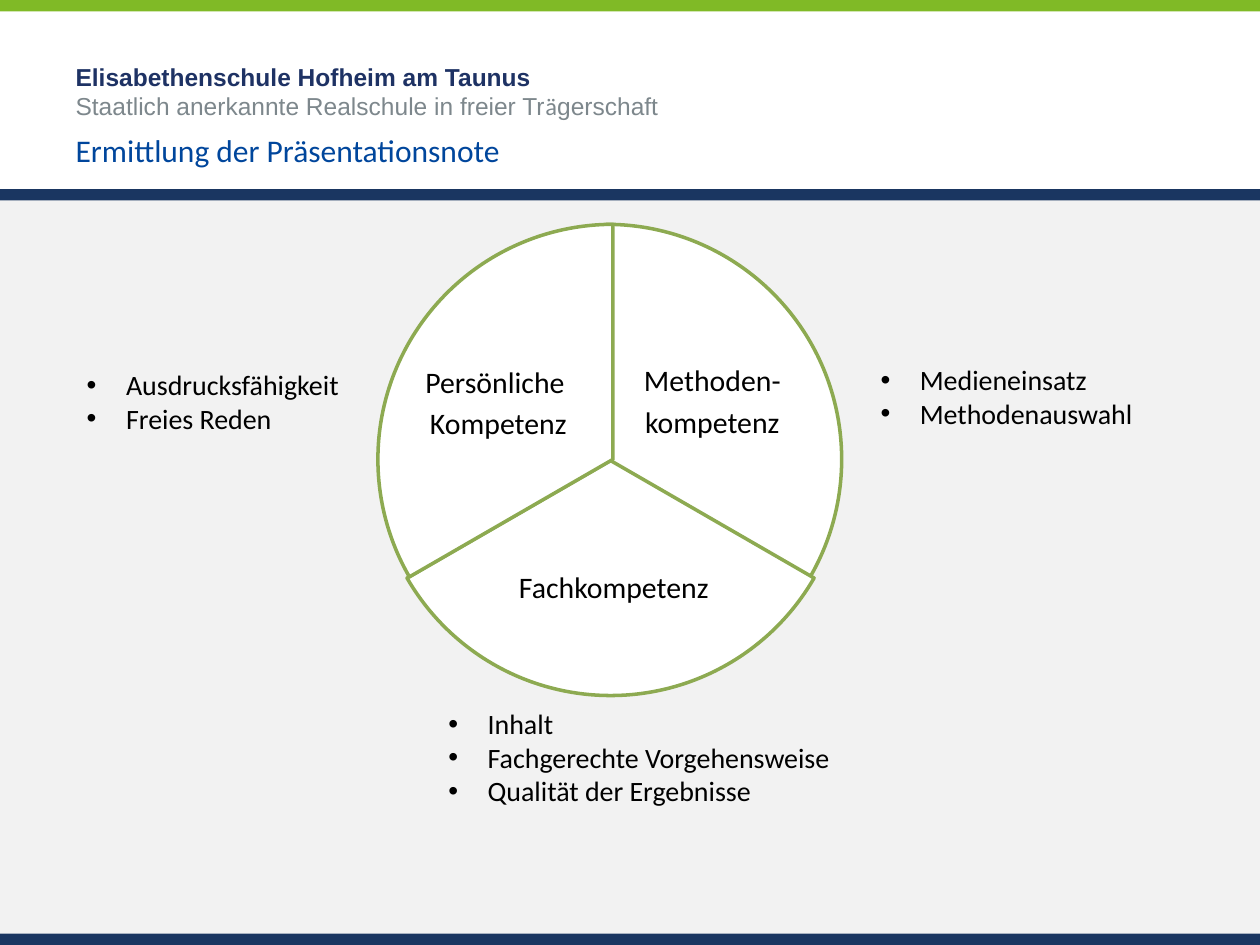
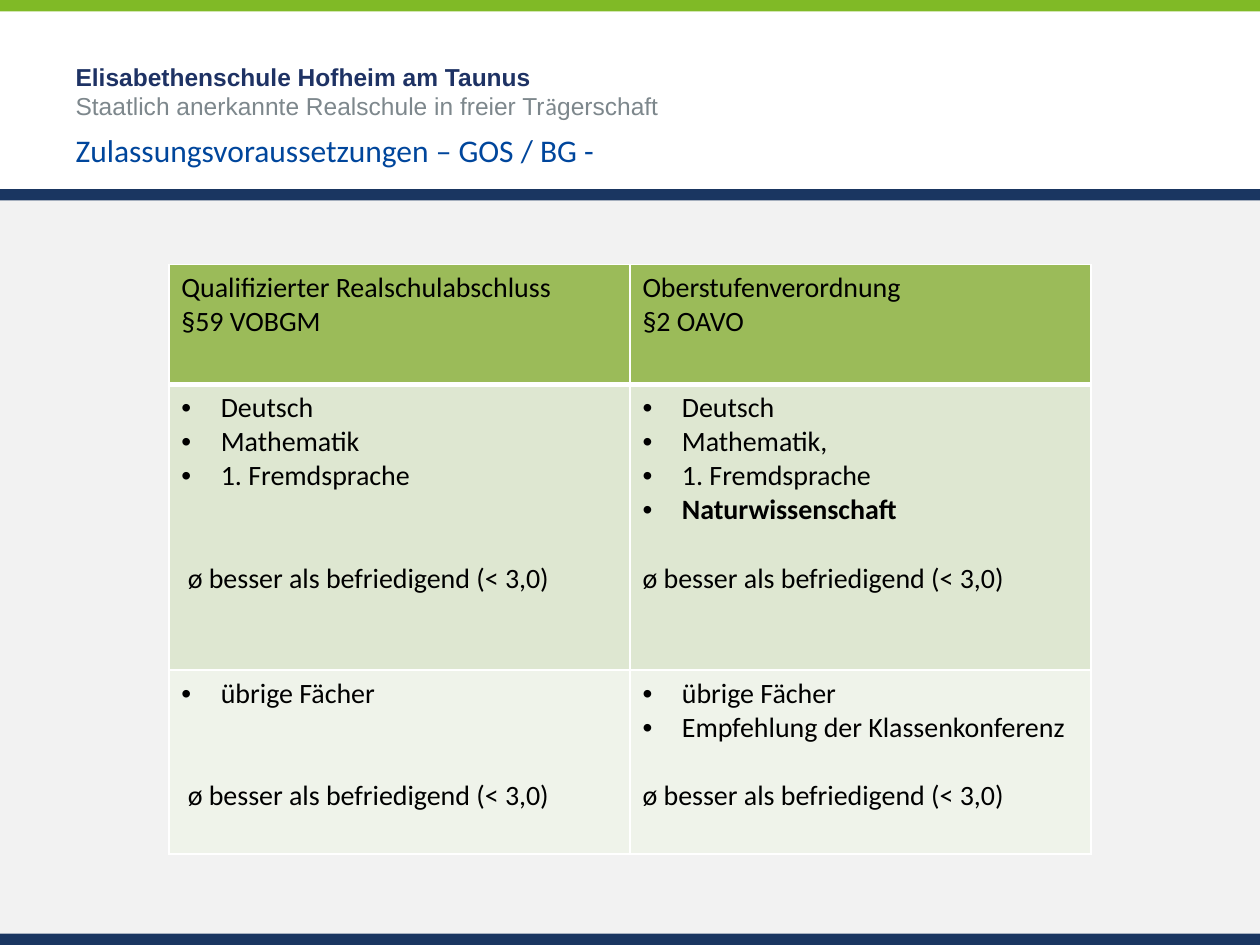
"""Build two school slides: presentation grading and admission requirements."""
import pptx
import pptx.dml.color
import pptx.enum.shapes
import pptx.enum.text
import pptx.oxml
import pptx.oxml.ns
import pptx.util
from lxml import etree

Pt = pptx.util.Pt
ALIGN = pptx.enum.text.PP_ALIGN
ANCHOR = pptx.enum.text.MSO_ANCHOR
SHAPES = pptx.enum.shapes.MSO_SHAPE

NAVY, GREEN, GREY, WHITE, BLACK = "1A3661", "80BA26", "F2F2F2", "FFFFFF", "000000"
SCHOOL, SUBLINE, HEADING, OUTLINE = "1E3264", "7D878C", "00469C", "8DAA51"
ROW_FILLS = ["9BBB59", "DEE7D1", "EFF3EA"]
BAND = 6.5
BULLET_INDENT = 22.5
LINE = 19.5
PIE_SIZE = 268.6

SCHOOL_FONT = {"name": "Arial", "size": Pt(14), "bold": True}
SUBLINE_FONT = {"name": "Arial", "size": Pt(14), "bold": False}
UMLAUT_FONT = {"name": "Calibri", "size": Pt(14), "bold": False}
HEADING_FONT = {"name": "Calibri", "size": Pt(18), "bold": False}
LABEL_FONT = {"name": "Calibri", "size": Pt(17), "bold": False}
TEXT_FONT = {"name": "Calibri", "size": Pt(16), "bold": False}
STRONG_FONT = {**TEXT_FONT, "bold": True}

LABEL_FRAME = {"word_wrap": True, "vertical_anchor": ANCHOR.MIDDLE}
LABEL_FRAME.update({f"margin_{side}": Pt(1.44) for side in ("left", "top", "right", "bottom")})
LABEL_PARAGRAPH = {"alignment": ALIGN.CENTER, "line_spacing": 0.9, "space_after": Pt(5.5)}
HEADER_FRAME = {
    "word_wrap": True,
    "auto_size": pptx.enum.text.MSO_AUTO_SIZE.NONE,
    "vertical_anchor": ANCHOR.TOP,
}
HEADER_PARAGRAPH = {"alignment": ALIGN.LEFT, "space_before": Pt(0)}


def apply(target, values):
    for key, value in values.items():
        setattr(target, key, value)


def rgb(value):
    return pptx.dml.color.RGBColor.from_string(value)


def add_run(paragraph, text, font, color=BLACK):
    run = paragraph.add_run()
    run.text = text
    apply(run.font, font)
    run.font.color.rgb = rgb(color)


def indent(paragraph, left, first=0):
    properties = paragraph._p.get_or_add_pPr()
    properties.set("marL", str(int(Pt(left))))
    properties.set("indent", str(int(Pt(first))))
    return properties


def add_bullet(paragraph):
    properties = indent(paragraph, BULLET_INDENT, -BULLET_INDENT)
    for tag, attribute, value in (("a:buFont", "typeface", "Arial"), ("a:buChar", "char", "•")):
        etree.SubElement(properties, pptx.oxml.ns.qn(tag)).set(attribute, value)


def paragraphs(frame, count):
    return [frame.paragraphs[0]] + [frame.add_paragraph() for _ in range(count - 1)]


def place(shape, left, top, width, height):
    apply(shape, {"left": Pt(left), "top": Pt(top), "width": Pt(width), "height": Pt(height)})


def add_band(slide, top, height, color):
    band = slide.shapes.add_shape(SHAPES.RECTANGLE, Pt(0), Pt(top), Pt(720), Pt(height))
    band.shadow.inherit = False
    band.fill.solid()
    band.fill.fore_color.rgb = rgb(color)
    band.line.fill.background()


def add_school_slide(deck, heading):
    slide = deck.slides.add_slide(deck.slide_layouts[1])
    for top, height, color in (
        (111.6, 421.9, GREY),
        (0, BAND, GREEN),
        (540 - BAND, BAND, NAVY),
        (108, BAND, NAVY),
    ):
        add_band(slide, top, height, color)

    school, topic = slide.shapes.title, slide.placeholders[1]
    place(school, 36, 31.7, 488, 39.6)
    place(topic, 36, 71.3, 488, 22.3)
    for header in (school, topic):
        apply(header.text_frame, HEADER_FRAME)
        apply(header.text_frame.paragraphs[0], HEADER_PARAGRAPH)

    name = school.text_frame.paragraphs[0]
    add_run(name, "Elisabethenschule Hofheim am Taunus", SCHOOL_FONT, SCHOOL)
    name.add_line_break()
    add_run(name, "Staatlich anerkannte Realschule in freier Tr", SUBLINE_FONT, SUBLINE)
    add_run(name, "ä", UMLAUT_FONT, SUBLINE)
    add_run(name, "gerschaft", SUBLINE_FONT, SUBLINE)

    line = topic.text_frame.paragraphs[0]
    etree.SubElement(indent(line, 0), pptx.oxml.ns.qn("a:buNone"))
    add_run(line, heading, HEADING_FONT, HEADING)
    return slide


def add_sector(slide, left, top, start, end):
    sector = slide.shapes.add_shape(SHAPES.PIE, Pt(left), Pt(top), Pt(PIE_SIZE), Pt(PIE_SIZE))
    for index, degrees in enumerate((start, end)):
        sector.adjustments[index] = degrees * 0.6
    sector.shadow.inherit = False
    sector.fill.solid()
    sector.fill.fore_color.rgb = rgb(WHITE)
    sector.line.color.rgb = rgb(OUTLINE)
    sector.line.width = Pt(2)


def add_label(slide, bounds, lines):
    frame = slide.shapes.add_textbox(*map(Pt, bounds)).text_frame
    apply(frame, LABEL_FRAME)
    for paragraph, text in zip(paragraphs(frame, len(lines)), lines):
        apply(paragraph, LABEL_PARAGRAPH)
        add_run(paragraph, text, LABEL_FONT)


def add_criteria(slide, bounds, criteria):
    frame = slide.shapes.add_textbox(*map(Pt, bounds)).text_frame
    frame.word_wrap = True
    for paragraph, text in zip(paragraphs(frame, len(criteria)), criteria):
        add_bullet(paragraph)
        add_run(paragraph, text, TEXT_FONT)


def set_borders(cell, top, bottom):
    properties = cell._tc.get_or_add_tcPr()
    for side, width in (("L", 1), ("R", 1), ("T", top), ("B", bottom)):
        properties.append(pptx.oxml.parse_xml(
            f'<a:ln{side} {pptx.oxml.ns.nsdecls("a")} w="{int(Pt(width))}">'
            f'<a:solidFill><a:srgbClr val="{WHITE}"/></a:solidFill></a:ln{side}>'
        ))


def fill_requirements(cell, subjects, gap, left):
    *bullets, average = paragraphs(cell.text_frame, len(subjects) + 1)
    for paragraph, subject in zip(bullets, subjects):
        add_bullet(paragraph)
        font = STRONG_FONT if subject == "Naturwissenschaft" else TEXT_FONT
        add_run(paragraph, subject, font)
    indent(average, left)
    average.space_before = Pt(gap * LINE)
    add_run(average, "ø besser als befriedigend (< 3,0)", TEXT_FONT)


def add_requirements_table(slide, regulations, requirements):
    table = slide.shapes.add_table(3, 2, Pt(96.5), Pt(151.2), Pt(527), Pt(337)).table
    for row, height in zip(table.rows, (68.4, 163.4, 105.1)):
        row.height = Pt(height)
    for row, color in enumerate(ROW_FILLS):
        for column in range(2):
            cell = table.cell(row, column)
            set_borders(cell, 3 if row == 1 else 1, 3 if row == 0 else 1)
            cell.fill.solid()
            cell.fill.fore_color.rgb = rgb(color)
            if row == 0:
                lines = regulations[column]
                for paragraph, text in zip(paragraphs(cell.text_frame, len(lines)), lines):
                    add_run(paragraph, text, TEXT_FONT)
            else:
                fill_requirements(cell, requirements[row - 1][column], 2 - column, (3.6, 0)[column])


def main():
    deck = pptx.Presentation()
    apply(deck, {"slide_width": Pt(720), "slide_height": Pt(540)})

    grading = add_school_slide(deck, "Ermittlung der Präsentationsnote")
    add_sector(grading, 212.4, 128.2, 270, 30)
    add_sector(grading, 214.6, 128.9, 30, 150)
    add_sector(grading, 216, 128.2, 150, 270)
    add_label(grading, (347, 185.8, 120.2, 89.3), ["Methoden-", "kompetenz"])
    add_label(grading, (293.8, 291.6, 113.8, 89.3), ["Fachkompetenz"])
    add_label(grading, (223.9, 189.4, 121.7, 83.5), ["Persönliche ", "Kompetenz"])
    add_criteria(grading, (249.1, 400.3, 236, 65.5),
                 ["Inhalt", "Fachgerechte Vorgehensweise", "Qualität der Ergebnisse"])
    add_criteria(grading, (496.1, 203.8, 200, 46), ["Medieneinsatz", "Methodenauswahl"])
    add_criteria(grading, (42.5, 206.6, 172, 46), ["Ausdrucksfähigkeit", "Freies Reden"])

    admission = add_school_slide(deck, "Zulassungsvoraussetzungen – GOS / BG -")
    add_requirements_table(
        admission,
        [["Qualifizierter Realschulabschluss", "§59 VOBGM"], ["Oberstufenverordnung", "§2 OAVO"]],
        [
            [["Deutsch", "Mathematik", "1. Fremdsprache"],
             ["Deutsch", "Mathematik,", "1. Fremdsprache", "Naturwissenschaft"]],
            [["übrige Fächer"], ["übrige Fächer", "Empfehlung der Klassenkonferenz"]],
        ],
    )
    deck.save("out.pptx")


if __name__ == "__main__":
    main()
